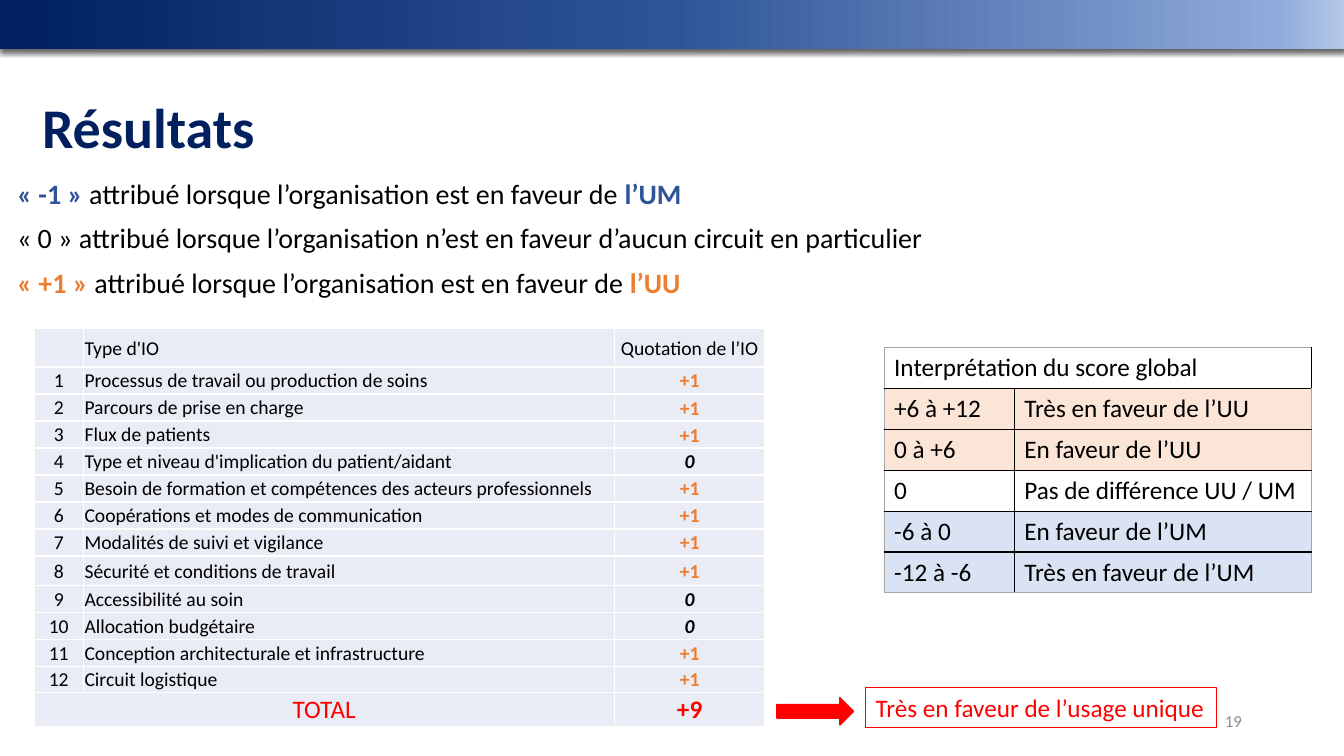
from pptx import Presentation
from pptx.dml.color import RGBColor
from pptx.enum.shapes import MSO_SHAPE
from pptx.enum.text import MSO_ANCHOR, PP_ALIGN
from pptx.oxml import parse_xml
from pptx.oxml.ns import nsdecls
from pptx.util import Cm, Pt

RECT, ARROW = MSO_SHAPE.RECTANGLE, MSO_SHAPE.RIGHT_ARROW
LEFT, CENTER, RIGHT = PP_ALIGN.LEFT, PP_ALIGN.CENTER, PP_ALIGN.RIGHT
TOP, MIDDLE, BOTTOM = MSO_ANCHOR.TOP, MSO_ANCHOR.MIDDLE, MSO_ANCHOR.BOTTOM

COLORS = {
    "navy": "002060", "blue": "2F5597", "sky": "8FAADC", "pale": "B4C7E7",
    "orange": "ED7D31", "red": "FF0000", "black": "000000", "white": "FFFFFF",
    "number": "8C8C8C", "edge": "A6A6A6", "band": "E9EBF5",
    "peach": "FBE5D6", "ice": "DAE3F3",
}
BANNER_STOPS = [(0, "navy"), (50, "blue"), (95, "sky"), (100, "pale")]

LEGEND = [
    [("« -1 » ", "blue"), ("attribué lorsque l’organisation est en faveur de ", "black"),
     ("l’UM", "blue")],
    [("« 0 » attribué lorsque l’organisation n’est en faveur d’aucun circuit en particulier",
      "black")],
    [("« +1 » ", "orange"), ("attribué lorsque l’organisation est en faveur de ", "black"),
     ("l’UU", "orange")],
]
SCORES = [
    ("Processus de travail ou production de soins", "+1"),
    ("Parcours de prise en charge", "+1"),
    ("Flux de patients", "+1"),
    ("Type et niveau d'implication du patient/aidant", "0"),
    ("Besoin de formation et compétences des acteurs professionnels", "+1"),
    ("Coopérations et modes de communication", "+1"),
    ("Modalités de suivi et vigilance", "+1"),
    ("Sécurité et conditions de travail", "+1"),
    ("Accessibilité au soin", "0"),
    ("Allocation budgétaire", "0"),
    ("Conception architecturale et infrastructure", "+1"),
    ("Circuit logistique", "+1"),
]
SCALE = [
    ("+6 à +12", "Très en faveur de l’UU", "peach"),
    ("0 à +6", "En faveur de l’UU", "peach"),
    ("0", "Pas de différence UU / UM", "white"),
    ("-6 à 0", "En faveur de l’UM", "ice"),
    ("-12 à -6", "Très en faveur de l’UM", "ice"),
]


def rgb(name):
    return RGBColor.from_string(COLORS[name])


def add_run(p, text, size, color="black", **formats):
    r = p.add_run()
    r.text = text
    r.font.color.rgb = rgb(color)
    for key, value in {"name": "Calibri", "size": Pt(size), **formats}.items():
        setattr(r.font, key, value)


def add_textbox(s, box, anchor=TOP):
    tf = s.shapes.add_textbox(*map(Cm, box)).text_frame
    tf.word_wrap = True
    tf.vertical_anchor = anchor
    return tf


def add_plain_shape(s, kind, box):
    sp = s.shapes.add_shape(kind, *map(Cm, box))
    sp.shadow.inherit = False
    return sp


def add_plain_table(s, box, widths, heights):
    table = s.shapes.add_table(len(heights), len(widths), *map(Cm, box)).table
    table.first_row = table.horz_banding = False
    for col, width in zip(table.columns, widths):
        col.width = Cm(width)
    for row, height in zip(table.rows, heights):
        row.height = Cm(height)
    return table


def style_cell(cell, fill, borders, anchor=TOP, margins=None):
    """Borders are colour names in the order left, right, top, bottom."""
    tcPr = cell._tc.get_or_add_tcPr()
    for side, color in zip("LRTB", borders):
        tcPr.append(parse_xml(
            f'<a:ln{side} {nsdecls("a")} w="12700"><a:solidFill>'
            f'<a:srgbClr val="{COLORS[color]}"/></a:solidFill></a:ln{side}>'))
    cell.fill.solid()
    cell.fill.fore_color.rgb = rgb(fill)
    cell.vertical_anchor = anchor
    for side, margin in (margins or {}).items():
        setattr(cell, f"margin_{side}", Cm(margin))


def write_cell(cell, text, size, align=LEFT, **formats):
    p = cell.text_frame.paragraphs[0]
    p.alignment = align
    add_run(p, text, size, **formats)


def add_banner(s, box):
    sp = add_plain_shape(s, RECT, box)
    sp.line.fill.background()
    sp.fill.gradient()
    sp.fill.gradient_angle = 0
    spPr = sp._element.spPr
    stops = spPr.find(".//{*}gsLst")
    for stop in list(stops):
        stops.remove(stop)
    for pos, color in BANNER_STOPS:
        stops.append(parse_xml(f'<a:gs {nsdecls("a")} pos="{pos * 1000}">'
                               f'<a:srgbClr val="{COLORS[color]}"/></a:gs>'))
    spPr.find("{*}effectLst").append(parse_xml(
        f'<a:outerShdw {nsdecls("a")} blurRad="{Pt(4.5)}" dist="{Pt(1.5)}" dir="5400000">'
        f'<a:srgbClr val="{COLORS["black"]}"><a:alpha val="63000"/></a:srgbClr></a:outerShdw>'))


def add_title(s, box):
    p = add_textbox(s, box, MIDDLE).paragraphs[0]
    p.line_spacing = 0.9
    add_run(p, "Résultats", 40, "navy", bold=True)


def add_page_number(s, box):
    p = add_textbox(s, box, MIDDLE).paragraphs[0]
    p.alignment = RIGHT
    add_run(p, "19", 12, "number")


def add_legend(s, box):
    tf = add_textbox(s, box)
    for i, line in enumerate(LEGEND):
        p = tf.add_paragraph() if i else tf.paragraphs[0]
        p.line_spacing = 0.9
        if i:
            p.space_before = Pt(10)
        for text, color in line:
            add_run(p, text, 20, color, bold=color != "black")


def add_score_table(s, box):
    heights = [0.97] + [0.68] * 7 + [0.74] + [0.68] * 3 + [0.66, 0.86]
    table = add_plain_table(s, box, [1.24, 13.38, 3.8], heights)
    margins = {"left": 0.03, "right": 0.03, "top": 0.03, "bottom": 0}
    for cell in table.iter_cells():
        style_cell(cell, "band", ["white"] * 4, MIDDLE, margins)
    # Header
    write_cell(table.cell(0, 1), "Type d'IO", 14)
    write_cell(table.cell(0, 2), "Quotation de l’IO", 14, CENTER)
    # Numbered criteria
    for i, (criterion, score) in enumerate(SCORES, 1):
        neutral = score == "0"
        write_cell(table.cell(i, 0), str(i), 14, CENTER)
        write_cell(table.cell(i, 1), criterion, 14)
        write_cell(table.cell(i, 2), score, 14, CENTER, bold=True, italic=neutral,
                   color="black" if neutral else "orange")
    for i in (2, 3):
        table.cell(i, 2).vertical_anchor = BOTTOM
    # Total
    last = len(SCORES) + 1
    table.cell(last, 0).merge(table.cell(last, 1))
    write_cell(table.cell(last, 0), "TOTAL", 18, CENTER, color="red")
    write_cell(table.cell(last, 2), "+9", 18, CENTER, color="red", bold=True)


def add_scale_table(s, box):
    rows = [("Interprétation du score global", "", "white")] + SCALE
    table = add_plain_table(s, box, [3.28, 7.5], [1.03] * len(rows))
    for i, (score, meaning, fill) in enumerate(rows):
        top = "black" if i else "edge"
        bottom = "black" if i < len(rows) - 1 else "edge"
        for j, text in enumerate((score, meaning)):
            cell = table.cell(i, j)
            sides = ["black", "edge"] if j else ["edge", "black"]
            style_cell(cell, fill, sides + [top, bottom])
            if text:
                write_cell(cell, text, 18)
    table.cell(0, 0).merge(table.cell(0, 1))


def add_conclusion(s, box):
    left, top, width, height = box
    # Arrow from the total
    sp = add_plain_shape(s, ARROW, (left, top + 0.26, 1.93, 0.69))
    sp.fill.solid()
    sp.fill.fore_color.rgb = sp.line.color.rgb = rgb("red")
    sp.line.width = Pt(1)
    # Framed verdict
    sp = add_plain_shape(s, RECT, (left + 2.24, top, width - 2.24, height))
    sp.fill.background()
    sp.line.color.rgb = rgb("red")
    sp.line.width = Pt(0.75)
    tf = sp.text_frame
    tf.word_wrap = True
    tf.vertical_anchor = TOP
    p = tf.paragraphs[0]
    p.alignment = LEFT
    add_run(p, "Très en faveur de l’usage unique", 18, "red")


def main():
    prs = Presentation()
    prs.slide_width, prs.slide_height = Cm(33.87), Cm(19.05)
    s = prs.slides.add_slide(prs.slide_layouts[6])
    add_title(s, (0.81, 1.45, 31.55, 3.68))
    add_page_number(s, (23.93, 17.65, 7.62, 1.02))
    add_banner(s, (0, 0, 33.87, 1.24))
    add_legend(s, (0.18, 4.42, 31.55, 10.67))
    add_score_table(s, (0.86, 8.28, 18.42, 10.01))
    add_scale_table(s, (22.28, 8.76, 10.78, 6.18))
    add_conclusion(s, (19.58, 17.32, 11.08, 1.02))
    prs.save("out.pptx")


if __name__ == "__main__":
    main()
